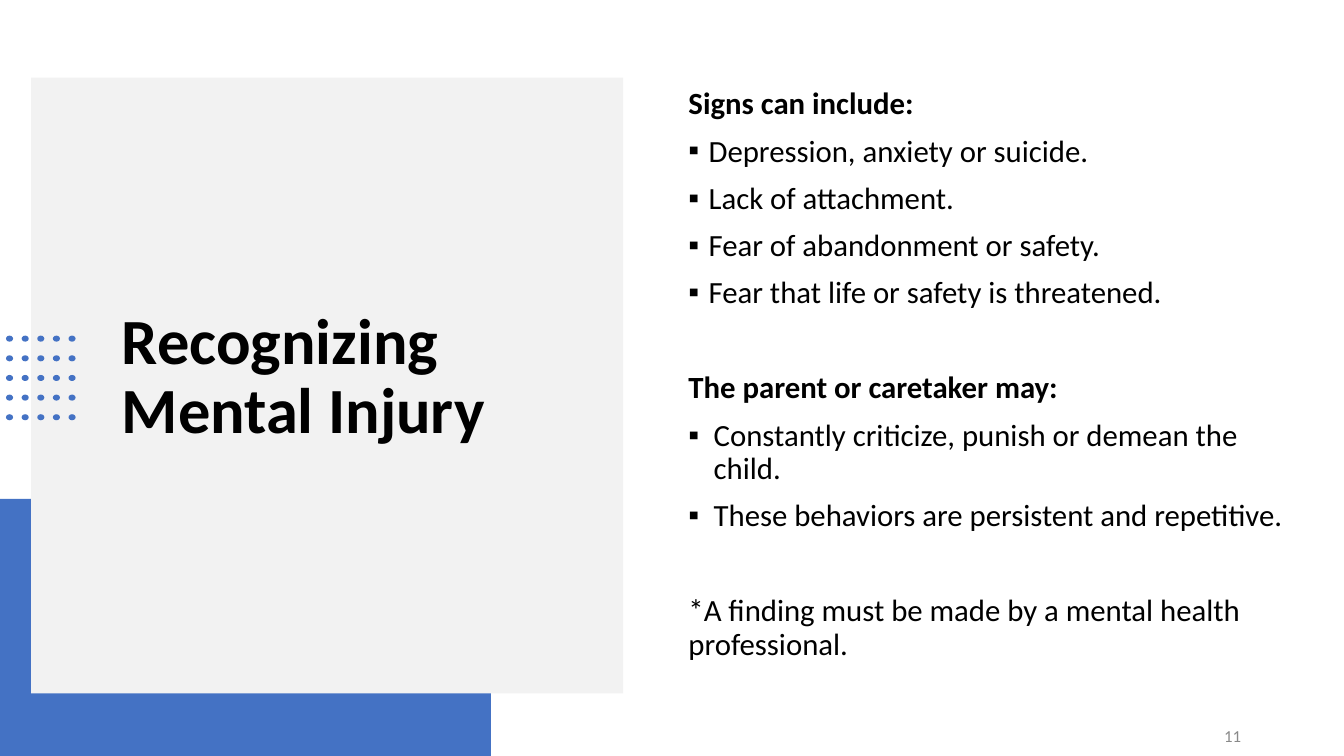
from dataclasses import dataclass
from itertools import product

from lxml import etree
from pptx import Presentation
from pptx.dml.color import RGBColor
from pptx.enum import shapes, text
from pptx.oxml import ns
from pptx.shapes.autoshape import Shape
from pptx.util import Inches, Pt

COLORS = {"blue": "4472C4", "panel": "F2F2F2", "text": "000000", "number": "898989"}
FONT = "Calibri"


@dataclass
class Box:
    left: float
    top: float
    width: float
    height: float

    def lengths(self) -> list[int]:
        return [Inches(v) for v in (self.left, self.top, self.width, self.height)]


@dataclass
class Line:
    words: str
    bold: bool = False
    indent: float = 0
    space_before: float = 10


SIGN_INDENT, CARETAKER_INDENT = 0.2, 0.25
SECTION_GAP = 44.2

BODY = [
    Line("Signs can include:", bold=True),
    Line("Depression, anxiety or suicide.", indent=SIGN_INDENT),
    Line("Lack of attachment.", indent=SIGN_INDENT),
    Line("Fear of abandonment or safety.", indent=SIGN_INDENT),
    Line("Fear that life or safety is threatened.", indent=SIGN_INDENT),
    Line("The parent or caretaker may:", bold=True, space_before=SECTION_GAP),
    Line("Constantly criticize, punish or demean the child.", indent=CARETAKER_INDENT),
    Line("These behaviors are persistent and repetitive.", indent=CARETAKER_INDENT),
    Line("*A finding must be made by a mental health professional.",
         space_before=SECTION_GAP),
]


def add_filled(parent, kind: shapes.MSO_SHAPE, box: Box, color: str) -> Shape:
    shape = parent.add_shape(kind, *box.lengths())
    shape.shadow.inherit = False
    shape.fill.solid()
    shape.fill.fore_color.rgb = RGBColor.from_string(COLORS[color])
    shape.line.fill.background()
    return shape


def add_span(para, words: str, size: float, color: str = "text", bold: bool = False) -> None:
    span = para.add_run()
    span.text = words
    span.font.name = FONT
    span.font.size = Pt(size)
    span.font.bold = bold
    span.font.color.rgb = RGBColor.from_string(COLORS[color])


def prepare_frame(shape: Shape):
    """Make the text wrap, sit in the middle and keep its size."""
    frame = shape.text_frame
    frame.word_wrap = True
    frame.auto_size = text.MSO_AUTO_SIZE.NONE
    frame.vertical_anchor = text.MSO_ANCHOR.MIDDLE
    return frame


def add_bullet(para, indent: float) -> None:
    props = para._p.get_or_add_pPr()
    props.set("marL", str(Inches(indent)))
    props.set("indent", str(-Inches(indent)))
    etree.SubElement(props, ns.qn("a:buFont"), typeface="Arial")
    etree.SubElement(props, ns.qn("a:buChar"), char="▪")


def place_title(slide) -> None:
    title = slide.shapes.title
    title.left, title.top, title.width, title.height = Box(1.11, 1.47, 4.59, 4.56).lengths()
    para = prepare_frame(title).paragraphs[0]
    para.alignment = text.PP_ALIGN.LEFT
    para.line_spacing = 0.9
    add_span(para, "Recognizing Mental Injury", 46, bold=True)


def add_backdrop(slide) -> None:
    """Draw the two rectangles behind the title."""
    for box, color in ((Box(0, 4.95, 4.87, 2.55), "blue"),
                       (Box(0.31, 0.77, 5.87, 6.11), "panel")):
        shape = add_filled(slide.shapes, shapes.MSO_SHAPE.RECTANGLE, box, color)
        slide.shapes.title.element.addprevious(shape.element)


def add_dot_grid(slide) -> None:
    group = slide.shapes.add_group_shape()
    for column, row in product(range(5), range(5)):
        box = Box(0.06 + 0.155 * column, 3.33 + 0.195 * row, 0.07, 0.06)
        add_filled(group.shapes, shapes.MSO_SHAPE.OVAL, box, "blue")


def add_body(slide) -> None:
    frame = prepare_frame(slide.shapes.add_textbox(*Box(6.73, 0.58, 6.19, 6.28).lengths()))
    for index, line in enumerate(BODY):
        para = frame.add_paragraph() if index else frame.paragraphs[0]
        para.line_spacing = 0.9
        para.space_before = Pt(line.space_before)
        if line.indent:
            add_bullet(para, line.indent)
        add_span(para, line.words, 22, bold=line.bold)


def add_page_number(slide) -> None:
    box = slide.shapes.add_textbox(*Box(11.01, 7.1, 1.4, 0.4).lengths())
    para = prepare_frame(box).paragraphs[0]
    para.alignment = text.PP_ALIGN.RIGHT
    para.space_after = Pt(6)
    add_span(para, "11", 12, "number")


def main() -> None:
    deck = Presentation()
    deck.slide_width, deck.slide_height = Inches(13.33), Inches(7.5)
    slide = deck.slides.add_slide(deck.slide_layouts.get_by_name("Title Only"))
    place_title(slide)
    add_backdrop(slide)
    add_dot_grid(slide)
    add_body(slide)
    add_page_number(slide)
    deck.save("out.pptx")


if __name__ == "__main__":
    main()
